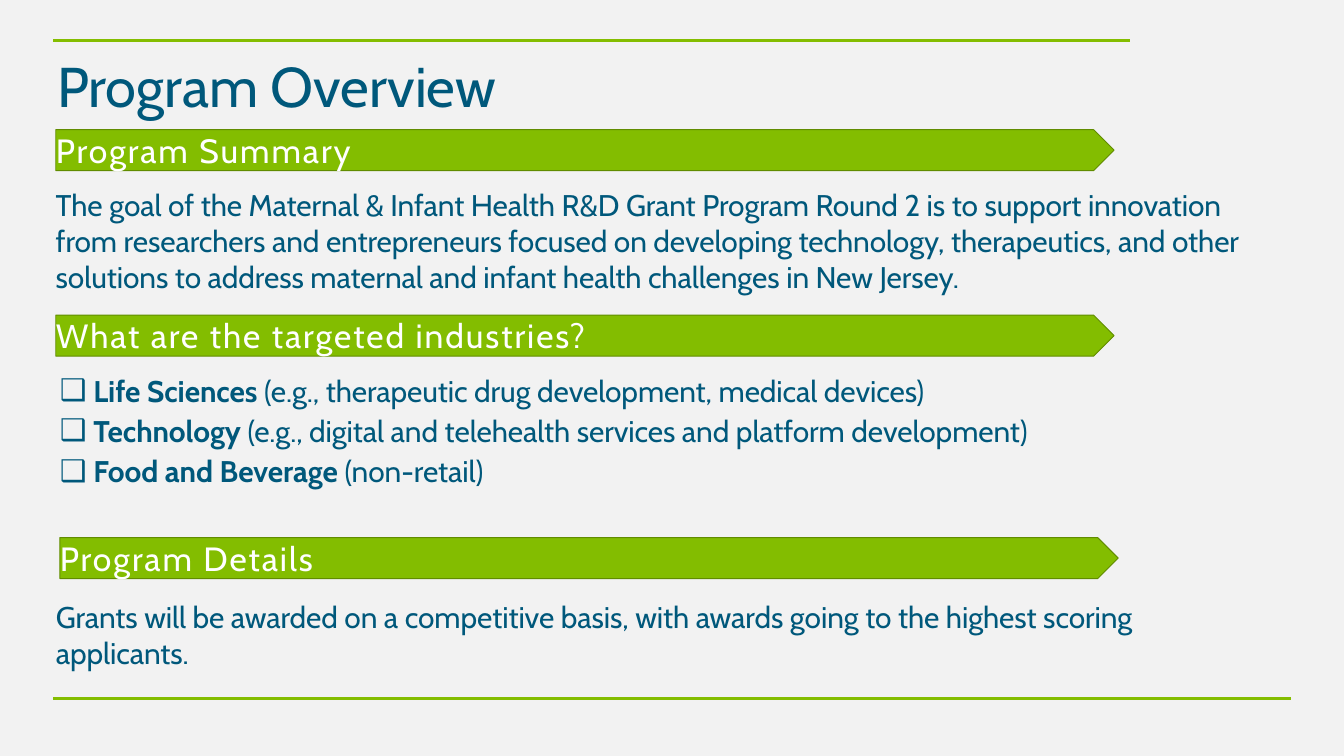
"""Build the Program Overview slide."""
import pptx
import pptx.dml.color
import pptx.enum.shapes
import pptx.enum.text
import pptx.oxml.ns
import pptx.util
from lxml import etree

COLORS = {
    "background": "F2F2F2",
    "rule": "84BD00",
    "banner": "83BD00",
    "banner_edge": "618C00",
    "ink": "00587B",
    "white": "FFFFFF",
}
FONT = "Cabin"
WIDTH, HEIGHT = 20, 11.25
COLUMNS, ROWS = 20, 11.25
LEFT = 0.83
INDUSTRIES = [
    ("Life Sciences", " (e.g., therapeutic drug development, medical devices)"),
    ("Technology", " (e.g., digital and telehealth services and platform development)"),
    ("Food and Beverage", " (non-retail)"),
]


def across(columns):
    """Turn grid columns into a length."""
    return pptx.util.Inches(columns * WIDTH / COLUMNS)


def down(rows):
    """Turn grid rows into a length."""
    return pptx.util.Inches(rows * HEIGHT / ROWS)


def area(column, row, columns, rows):
    """Give left, top, width and height of a block of the grid."""
    return across(column), down(row), across(columns), down(rows)


def color(name):
    """Look up a colour of the palette."""
    return pptx.dml.color.RGBColor.from_string(COLORS[name])


def add_child(parent, tag, **attributes):
    """Append a drawing element to a parent."""
    return etree.SubElement(parent, pptx.oxml.ns.qn(tag), attributes)


def place(placeholder, column, row, columns, rows):
    """Move a placeholder to a block of the grid."""
    placeholder.left, placeholder.top, placeholder.width, placeholder.height = area(
        column, row, columns, rows)


def set_frame(frame, inset=0):
    """Wrap text from the top with equal insets."""
    frame.word_wrap = True
    frame.auto_size = pptx.enum.text.MSO_AUTO_SIZE.NONE
    frame.vertical_anchor = pptx.enum.text.MSO_ANCHOR.TOP
    frame.margin_left = frame.margin_right = pptx.util.Inches(inset)
    frame.margin_top = frame.margin_bottom = pptx.util.Inches(inset / 2)


def style(paragraph, size, ink="ink", spacing=0):
    """Set alignment, font and letter spacing in points."""
    paragraph.alignment = pptx.enum.text.PP_ALIGN.LEFT
    font = paragraph.font
    font.name = FONT
    font.size = pptx.util.Pt(size)
    font.color.rgb = color(ink)
    font._rPr.set("spc", str(round(spacing * 100)))


def add_rule(slide, row, end):
    """Draw a horizontal rule from the left margin."""
    rule = slide.shapes.add_connector(
        pptx.enum.shapes.MSO_CONNECTOR.STRAIGHT,
        across(0.79), down(row), across(end), down(row))
    rule.line.color.rgb = color("rule")
    rule.line.width = pptx.util.Pt(3)
    add_child(rule._element.spPr, "a:effectLst")


def add_title(slide, text):
    """Fill the title placeholder."""
    title = slide.shapes.title
    place(title, 0.75, 0.72, 7.32, 1.11)
    set_frame(title.text_frame, 0.1)
    title.text_frame.text = text
    style(title.text_frame.paragraphs[0], 60)


def add_banner(slide, text, row, column=LEFT):
    """Draw a section heading on an arrow-ended bar."""
    banner = slide.shapes.add_shape(
        pptx.enum.shapes.MSO_SHAPE.PENTAGON, *area(column, row, 15.75, 0.61))
    banner.shadow.inherit = False
    banner.fill.solid()
    banner.fill.fore_color.rgb = color("banner")
    banner.line.color.rgb = color("banner_edge")
    banner.line.width = pptx.util.Pt(1)
    set_frame(banner.text_frame)
    banner.text_frame.text = text
    style(banner.text_frame.paragraphs[0], 36, "white", 2.1)


def add_statement(slide, text, column, row, columns, rows):
    """Add a paragraph of running text."""
    statement = slide.shapes.add_textbox(*area(column, row, columns, rows))
    set_frame(statement.text_frame)
    statement.text_frame.text = text
    style(statement.text_frame.paragraphs[0], 32, spacing=-0.1)


def add_industries(slide, industries):
    """Fill the body placeholder with box-bulleted industries."""
    listing = slide.placeholders[1]
    place(listing, LEFT, 5.54, 16.73, 1.76)
    frame = listing.text_frame
    set_frame(frame)
    for index, (industry, examples) in enumerate(industries):
        paragraph = frame.add_paragraph() if index else frame.paragraphs[0]
        properties = paragraph._p.get_or_add_pPr()
        properties.set("marL", str(pptx.util.Inches(0.56)))
        properties.set("indent", str(pptx.util.Inches(-0.5)))
        add_child(properties, "a:buChar", char="❑")
        paragraph.space_before = pptx.util.Pt(4.7 if index else 0)
        style(paragraph, 32, spacing=-0.1)
        name = paragraph.add_run()
        name.text = industry
        name.font.bold = True
        paragraph.add_run().text = examples


def main():
    """Build and save the slide."""
    deck = pptx.Presentation()
    deck.slide_width = pptx.util.Inches(WIDTH)
    deck.slide_height = pptx.util.Inches(HEIGHT)
    slide = deck.slides.add_slide(deck.slide_layouts[1])
    slide.background.fill.solid()
    slide.background.fill.fore_color.rgb = color("background")

    add_rule(slide, 0.6, 16.81)
    add_rule(slide, 10.4, 19.21)
    add_title(slide, "Program Overview")
    add_banner(slide, "Program Summary", 1.93)
    add_statement(
        slide,
        "The goal of the Maternal & Infant Health R&D Grant Program Round 2 is to "
        "support innovation from researchers and entrepreneurs focused on developing "
        "technology, therapeutics, and other solutions to address maternal and infant "
        "health challenges in New Jersey.",
        LEFT, 2.78, 18.26, 1.62)
    add_banner(slide, "What are the targeted industries?", 4.69)
    add_industries(slide, INDUSTRIES)
    add_banner(slide, "Program Details", 8, 0.89)
    add_statement(
        slide,
        "Grants will be awarded on a competitive basis, with awards going to the "
        "highest scoring applicants.",
        LEFT, 8.91, 16.22, 1.08)
    deck.save("out.pptx")


if __name__ == "__main__":
    main()
